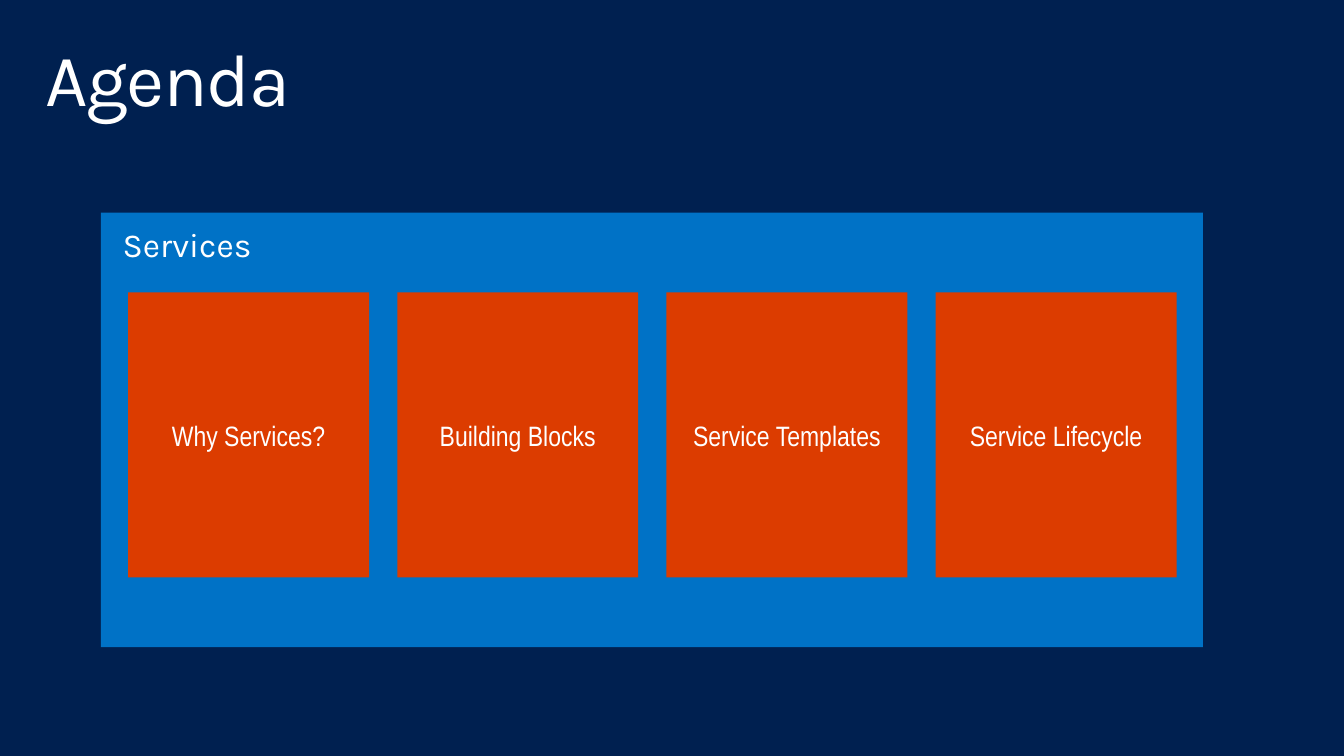
from pptx import Presentation
from pptx.dml.color import RGBColor
from pptx.enum.shapes import MSO_SHAPE
from pptx.enum.text import MSO_ANCHOR, MSO_AUTO_SIZE, PP_ALIGN
from pptx.util import Inches, Pt

RECTANGLE = MSO_SHAPE.RECTANGLE
MIDDLE, TOP = MSO_ANCHOR.MIDDLE, MSO_ANCHOR.TOP
CENTER, LEFT = PP_ALIGN.CENTER, PP_ALIGN.LEFT
GROW = MSO_AUTO_SIZE.SHAPE_TO_FIT_TEXT

WIDTH, HEIGHT = 13.33, 7.5
NAVY, BLUE, ORANGE, WHITE = "002050", "0072C6", "DC3C00", "FFFFFF"
HEADING_FONT, TILE_FONT = "Karla", "Arial Narrow"
TOPICS = ["Why Services?", "Building Blocks", "Service Templates", "Service Lifecycle"]


def paint(fill, color):
    fill.solid()
    fill.fore_color.rgb = RGBColor.from_string(color)


def add_panel(shapes, box, color):
    panel = shapes.add_shape(RECTANGLE, *map(Inches, box))
    panel.shadow.inherit = False
    paint(panel.fill, color)
    panel.line.fill.background()
    return panel


def write(shape, text, font, size, inset, align=LEFT, anchor=TOP, wrap=True):
    frame = shape.text_frame
    frame.word_wrap = wrap
    frame.vertical_anchor = anchor
    frame.margin_left = frame.margin_right = Inches(inset[0])
    frame.margin_top = frame.margin_bottom = Inches(inset[1])
    para = frame.paragraphs[0]
    para.alignment = align
    span = para.add_run()
    span.text = text
    span.font.name = font
    span.font.size = Pt(size)
    paint(span.font.fill, WHITE)
    return para


def add_title(page, box):
    title = page.shapes.add_textbox(*map(Inches, box))
    para = write(title, "Agenda", HEADING_FONT, 52.9, (0.16, 0.1))
    para.line_spacing = 0.9
    para.runs[0].font._element.set("spc", "-100")


def add_services_panel(page, box):
    left, top, width, height = box
    group = page.shapes.add_group_shape()
    add_panel(group.shapes, box, BLUE)
    label = group.shapes.add_textbox(*map(Inches, (left, top, 1.71, 0.59)))
    para = write(label, "Services", HEADING_FONT, 24, (0.2, 0.16), CENTER, wrap=False)
    para.line_spacing = 0.9
    para.space_after = Pt(6)
    label.text_frame.auto_size = GROW


def add_topic_tiles(page, box, gap=0.28):
    left, top, width, height = box
    tile_width = (width - gap * (len(TOPICS) - 1)) / len(TOPICS)
    for column, topic in enumerate(TOPICS):
        tile_left = left + column * (tile_width + gap)
        tile = add_panel(page.shapes, (tile_left, top, tile_width, height), ORANGE)
        write(tile, topic, TILE_FONT, 20, (0.13, 0.07), CENTER, MIDDLE)


def main():
    deck = Presentation()
    deck.slide_width, deck.slide_height = Inches(WIDTH), Inches(HEIGHT)
    page = deck.slides.add_slide(deck.slide_layouts[6])
    paint(page.background.fill, NAVY)
    add_title(page, (0.29, 0.32, 12.75, 0.98))
    add_services_panel(page, (1, 2.11, 10.93, 4.31))
    add_topic_tiles(page, (1.27, 2.9, 10.4, 2.83))
    deck.save("out.pptx")


if __name__ == "__main__":
    main()
